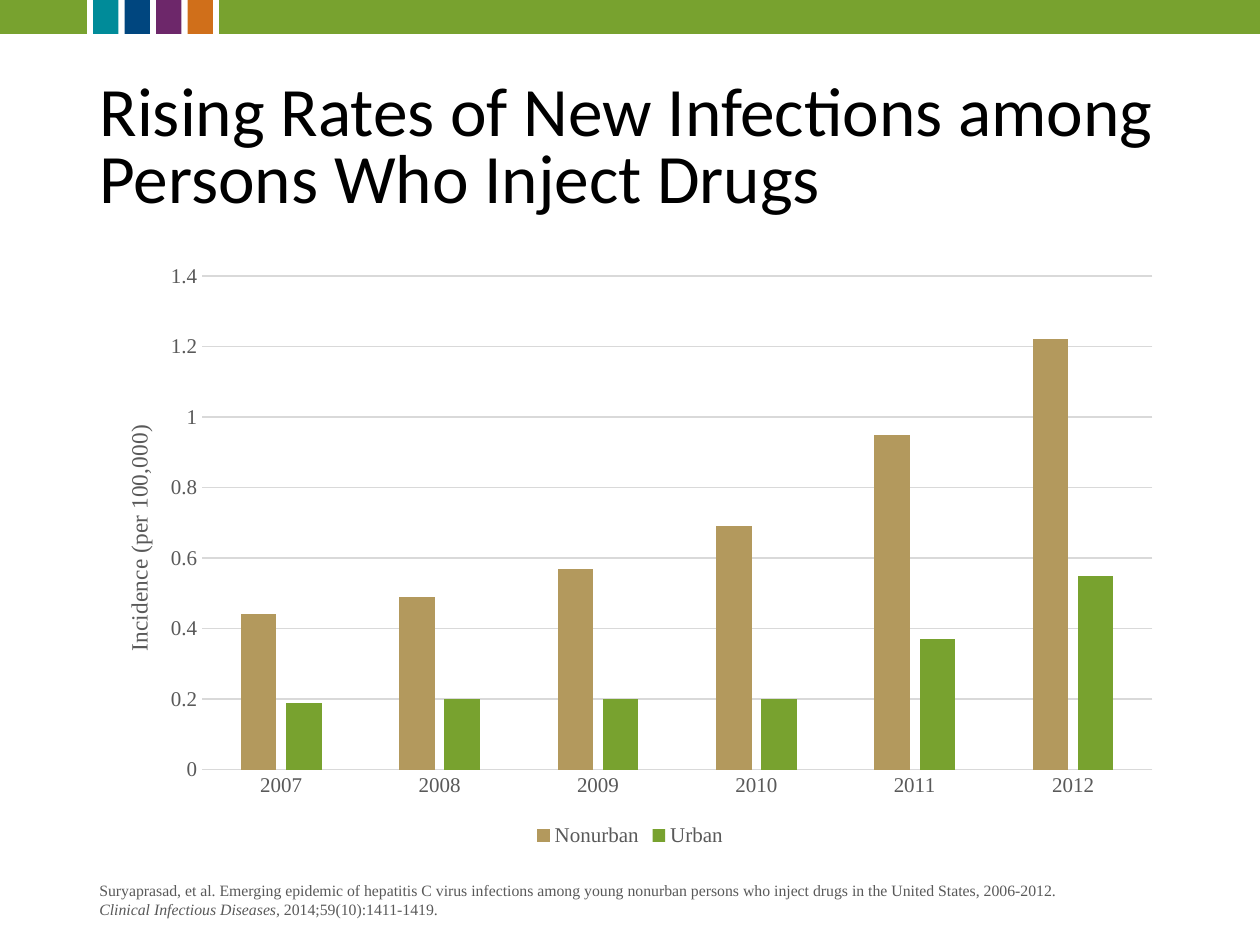
from lxml import etree
from pptx import Presentation
from pptx.chart.data import CategoryChartData
from pptx.dml.color import RGBColor
from pptx.enum.chart import XL_CHART_TYPE, XL_LEGEND_POSITION, XL_TICK_MARK
from pptx.enum.shapes import MSO_SHAPE
from pptx.enum.text import MSO_ANCHOR, MSO_AUTO_SIZE, PP_ALIGN
from pptx.util import Inches, Pt

RECT = MSO_SHAPE.RECTANGLE
COLUMNS = XL_CHART_TYPE.COLUMN_CLUSTERED
BOTTOM = XL_LEGEND_POSITION.BOTTOM
NO_TICK = XL_TICK_MARK.NONE
MIDDLE = MSO_ANCHOR.MIDDLE
FIT_SHAPE = MSO_AUTO_SIZE.SHAPE_TO_FIT_TEXT
NO_FIT = MSO_AUTO_SIZE.NONE
LEFT = PP_ALIGN.LEFT

SERIF = "Times New Roman"
GREEN, TAN, GRAY, PALE = "78A22F", "B3995D", "595959", "D9D9D9"
STRIPES = ["008B99", "00467F", "6D276A", "D06F1A"]
EDGE, WIDTH = 0.69, 8.62

YEARS = ["2007", "2008", "2009", "2010", "2011", "2012"]
RATES = [
    ("Nonurban", TAN, [0.44, 0.49, 0.57, 0.69, 0.95, 1.22]),
    ("Urban", GREEN, [0.19, 0.2, 0.2, 0.2, 0.37, 0.55]),
]


def color(code):
    return RGBColor.from_string(code)


def style(font, size=12, face=SERIF, code=GRAY, bold=False, italic=False):
    font.size, font.name = Pt(size), face
    font.bold, font.italic = bold, italic
    font.color.rgb = color(code)


def write(para, text, **form):
    run = para.add_run()
    run.text = text
    style(run.font, **form)


def add_block(slide, left, width, code):
    block = slide.shapes.add_shape(RECT, Inches(left), 0, Inches(width), Inches(0.27))
    block.shadow.inherit = False
    block.fill.solid()
    block.fill.fore_color.rgb = color(code)
    block.line.fill.background()


def add_banner(slide):
    add_block(slide, 0, EDGE, GREEN)
    for i, code in enumerate(STRIPES):
        add_block(slide, 0.74 + 0.25 * i, 0.2, code)
    add_block(slide, 1.74, 8.26, GREEN)


def set_title(slide):
    title = slide.shapes.title
    title.left, title.top = Inches(EDGE), Inches(0.69)
    title.width, title.height = Inches(WIDTH), Inches(1)
    frame = title.text_frame
    frame.word_wrap, frame.auto_size = True, NO_FIT
    frame.vertical_anchor = MIDDLE
    para = frame.paragraphs[0]
    para.alignment, para.line_spacing = LEFT, 0.8
    write(para, "Rising Rates of New Infections among Persons Who Inject Drugs",
          size=39.6, face="Calibri", code="000000")


def place(part, index, inner=False, **spots):
    """Fix a chart part's place, in fractions of the chart."""
    space = part.nsmap["c"]
    tag = "{%s}" % space
    for old in part.findall(tag + "layout"):
        part.remove(old)
    layout = etree.fromstring(f'<c:layout xmlns:c="{space}"><c:manualLayout/></c:layout>')
    part.insert(index, layout)
    values = {"layoutTarget": "inner"} if inner else {}
    values.update(xMode="edge", yMode="edge", **spots)
    for name, value in values.items():
        etree.SubElement(layout[0], tag + name).set("val", str(value))


def rule(line):
    line.color.rgb = color(PALE)
    line.width = Pt(0.75)


def format_axes(chart):
    years, rates = chart.category_axis, chart.value_axis
    for axis in (years, rates):
        axis.major_tick_mark = axis.minor_tick_mark = NO_TICK
        style(axis.tick_labels.font)
    rule(years.format.line)
    rates.format.line.fill.background()
    rates.has_major_gridlines = True
    rule(rates.major_gridlines.format.line)
    rates.minimum_scale, rates.maximum_scale, rates.major_unit = 0, 1.4, 0.2
    rates.tick_labels.number_format = "General"
    rates.tick_labels.number_format_is_linked = False
    label = rates.axis_title
    write(label.text_frame.paragraphs[0], "Incidence (per 100,000)", size=13.3)
    place(label._element, 1, x=0.03, y=0.28)


def add_rates(slide):
    data = CategoryChartData()
    data.categories = YEARS
    for name, _, values in RATES:
        data.add_series(name, values)
    chart = slide.shapes.add_chart(COLUMNS, Inches(EDGE), Inches(2.01),
                                   Inches(WIDTH), Inches(4.75), data).chart
    style(chart.font)
    chart.has_title = False
    chart.has_legend = True
    chart.legend.position = BOTTOM
    chart.legend.include_in_layout = False
    style(chart.legend.font)
    plot = chart.plots[0]
    plot.vary_by_categories = False
    plot.gap_width, plot.overlap = 219, -27
    for series, (_, code, _) in zip(plot.series, RATES):
        series.format.fill.solid()
        series.format.fill.fore_color.rgb = color(code)
    format_axes(chart)
    area = chart._chartSpace.chart.plotArea
    place(area, 0, inner=True, x=0.106, y=0.038, w=0.875, h=0.825)


def add_source(slide):
    box = slide.shapes.add_textbox(Inches(EDGE), Inches(6.94), Inches(8.02), Inches(0.4))
    frame = box.text_frame
    frame.word_wrap, frame.auto_size = True, FIT_SHAPE
    para = frame.paragraphs[0]
    write(para, "Suryaprasad, et al. Emerging epidemic of hepatitis C virus infections "
          "among young nonurban persons who inject drugs in the United States, "
          "2006-2012. ", size=9)
    write(para, "Clinical Infectious Diseases, ", size=9, italic=True)
    write(para, "2014;59(10):1411-1419.", size=9)


def main():
    deck = Presentation()
    deck.slide_width, deck.slide_height = Inches(10), Inches(7.5)
    slide = deck.slides.add_slide(deck.slide_layouts[5])
    add_banner(slide)
    set_title(slide)
    add_rates(slide)
    add_source(slide)
    deck.save("out.pptx")


if __name__ == "__main__":
    main()
